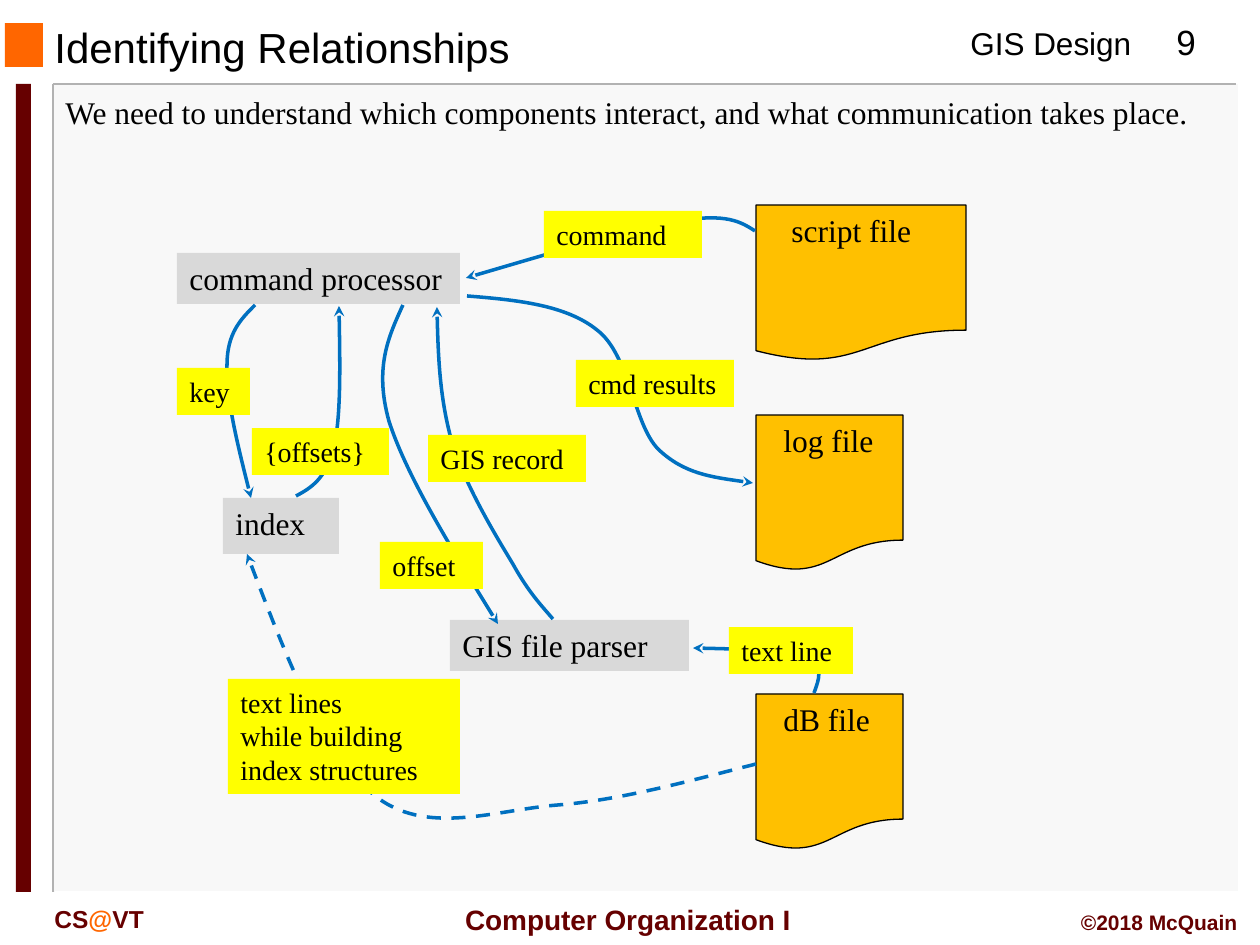
from dataclasses import dataclass
from lxml import etree
from pptx import Presentation
from pptx import util as u
from pptx.dml.color import RGBColor
from pptx.enum import dml, shapes, text
from pptx.oxml.ns import qn

PX = 914400 / 126  # EMU in one px


@dataclass(frozen=True)
class Theme:
    sans: str = "Arial"
    serif: str = "Times New Roman"
    black: str = "000000"
    white: str = "FFFFFF"
    panel: str = "F8F8F8"
    edge: str = "B2B2B2"
    orange: str = "FF6600"
    maroon: str = "660000"
    component: str = "D9D9D9"
    file: str = "FFC000"
    label: str = "FFFF00"
    flow: str = "0070C0"
    title: int = 24
    number: int = 20
    body: int = 18
    small: int = 16
    brand: int = 14
    credit: int = 12


T = Theme()
TOP, MIDDLE = text.MSO_ANCHOR.TOP, text.MSO_ANCHOR.MIDDLE
LEFT, CENTER, RIGHT = text.PP_ALIGN.LEFT, text.PP_ALIGN.CENTER, text.PP_ALIGN.RIGHT
RECT = shapes.MSO_SHAPE.RECTANGLE
DOCUMENT = shapes.MSO_SHAPE.FLOWCHART_DOCUMENT

COMPONENTS = [
    ("index", (223, 498, 116, 56)),
    ("GIS file parser", (450, 620, 239, 51)),
    ("command processor", (177, 253, 283, 51)),
]
FILES = [  # name, top, width, text left, text width
    ("dB file", 694, 147, 771, 116),
    ("script file", 205, 210, 779, 165),
    ("log file", 415, 147, 771, 116),
]
LABELS = [
    (["command"], (544, 211, 158, 47)),
    (["cmd results"], (576, 360, 158, 47)),
    (["GIS record"], (428, 435, 158, 47)),
    (["key"], (177, 368, 73, 47)),
    (["{offsets}"], (252, 428, 137, 47)),
    (["offset"], (380, 542, 103, 47)),
    (["text line"], (729, 627, 124, 47)),
    (["text lines", "while building index structures"], (228, 679, 232, 115)),
]
# Start point, then two control points and an end point for each Bezier piece
FLOWS = {
    "command": [(755, 231), (741, 222), (727, 213), (679, 221),
                (631, 229), (548, 254), (466, 278)],
    "cmd results": [(467, 296), (517, 300), (566, 305), (597, 330), (630, 355),
                    (633, 423), (658, 449), (684, 474), (718, 478), (753, 483)],
    "key": [(255, 305), (241, 319), (227, 333), (227, 365),
            (226, 397), (238, 447), (251, 498)],
    "offsets": [(296, 496), (311, 488), (326, 479), (334, 447),
                (341, 416), (340, 360), (339, 306)],
    "offset": [(403, 305), (389, 336), (374, 367), (389, 421),
               (406, 474), (451, 548), (498, 624)],
    "GIS record": [(553, 619), (542, 606), (529, 593), (513, 564), (496, 536),
                   (465, 485), (452, 442), (440, 399), (438, 353), (437, 307)],
    "text line": [(814, 693), (819, 679), (825, 665), (805, 658),
                  (785, 650), (738, 649), (693, 648)],
    "index build": [(756, 764), (689, 781), (621, 800), (558, 805), (494, 810),
                    (426, 837), (374, 795), (323, 752), (285, 654), (247, 554)],
}


def emu(*lengths):
    return [u.Emu(round(n * PX)) for n in lengths]


def rgb(color):
    return RGBColor.from_string(color)


def write(sp, paragraphs, size, font=T.serif, color=T.black, bold=False,
          align=LEFT, anchor=TOP, wrap=True):
    """Fill a shape with text; a paragraph is a string or a list of (text, colour)."""
    tf = sp.text_frame
    for name, value in {"word_wrap": wrap, "vertical_anchor": anchor}.items():
        setattr(tf, name, value)
    for i, content in enumerate(paragraphs):
        p = tf.paragraphs[0] if i == 0 else tf.add_paragraph()
        p.alignment = align
        runs = [(content, color)] if isinstance(content, str) else content
        for words, run_color in runs:
            r = p.add_run()
            r.text = words
            form = {"name": font, "size": u.Pt(size), "bold": bold}
            for name, value in form.items():
                setattr(r.font, name, value)
            r.font.color.rgb = rgb(run_color)


def add_block(parent, box, fill, kind=RECT, outline=None):
    sp = parent.shapes.add_shape(kind, *emu(*box))
    sp.shadow.inherit = False
    sp.fill.solid()
    sp.fill.fore_color.rgb = rgb(fill)
    if outline:
        sp.line.color.rgb = rgb(outline)
        sp.line.width = u.Pt(0.75)
    else:
        sp.line.fill.background()
    return sp


def add_text(parent, box, paragraphs, size, **form):
    write(parent.shapes.add_textbox(*emu(*box)), paragraphs, size, **form)


def add_edge(s, ends, color):
    line = s.shapes.add_connector(shapes.MSO_CONNECTOR.STRAIGHT, *emu(*ends))
    line.line.color.rgb = rgb(color)
    line.line.width = u.Pt(1)
    etree.SubElement(line._element.spPr, qn("a:effectLst"))


def add_file(s, name, top, width, text_left, text_width):
    group = s.shapes.add_group_shape()
    add_block(group, (756, top, width, 156), T.file, DOCUMENT, T.black)
    add_text(group, (text_left, top, text_width, 57), [name], T.body)


def add_flow(s, points, dashed=False):
    """Draw a Bezier arrow: a polyline whose segments are joined in threes."""
    builder = s.shapes.build_freeform(*points[0], scale=PX)
    builder.add_line_segments(points[1:], close=False)
    sp = builder.convert_to_shape()
    sp.shadow.inherit = False
    sp.fill.background()
    sp.line.color.rgb = rgb(T.flow)
    sp.line.width = u.Pt(2)
    if dashed:
        sp.line.dash_style = dml.MSO_LINE.DASH
    geom = sp._element.xpath(".//a:path")[0]
    segments = geom.findall(qn("a:lnTo"))
    for i in range(0, len(segments), 3):
        curve = etree.SubElement(geom, qn("a:cubicBezTo"))
        for segment in segments[i:i + 3]:
            curve.append(segment[0])
            geom.remove(segment)
    ln = sp._element.spPr.find(qn("a:ln"))
    etree.SubElement(ln, qn("a:tailEnd"), type="stealth")


def add_frame(s):
    add_block(s, (54, 84, 1184, 808), T.panel)
    for ends, color in [((53, 84, 1236, 84), T.edge), ((53, 84, 53, 892), T.edge),
                        ((1239, 84, 1239, 892), T.white),
                        ((55, 892, 1239, 892), T.white)]:
        add_edge(s, ends, color)
    add_block(s, (5, 23, 38, 44), T.orange)
    add_block(s, (16, 84, 15, 808), T.maroon)
    head = {"font": T.sans}
    foot = {"font": T.sans, "color": T.maroon, "bold": True}
    add_text(s, (958, 18, 188, 50), ["GIS Design"], T.body, wrap=False, **head)
    add_text(s, (1144, 14, 84, 54), ["9"], T.number, align=CENTER, **head)
    add_text(s, (42, 23, 798, 48), ["Identifying Relationships"], T.title,
             anchor=MIDDLE, **head)
    add_text(s, (442, 896, 372, 47), ["Computer Organization I"], T.small,
             align=CENTER, anchor=MIDDLE, wrap=False, **foot)
    add_text(s, (42, 898, 189, 42),
             [[("CS", T.maroon), ("@", T.orange), ("VT", T.maroon)]], T.brand, **foot)
    add_text(s, (882, 903, 368, 38), ["©2018 McQuain"], T.credit, align=RIGHT, **foot)


def main():
    prs = Presentation()
    prs.slide_width, prs.slide_height = emu(1260, 945)
    s = prs.slides.add_slide(prs.slide_layouts[6])
    add_frame(s)
    add_text(s, (53, 87, 1176, 50),
             ["We need to understand which components interact, "
              "and what communication takes place."], T.body)
    for name, box in COMPONENTS:
        write(add_block(s, box, T.component), [name], T.body)
    for file in FILES:
        add_file(s, *file)
    for name, points in FLOWS.items():
        add_flow(s, points, dashed=name == "index build")
    for lines, box in LABELS:
        write(add_block(s, box, T.label), lines, T.small)
    prs.save("out.pptx")


if __name__ == "__main__":
    main()
